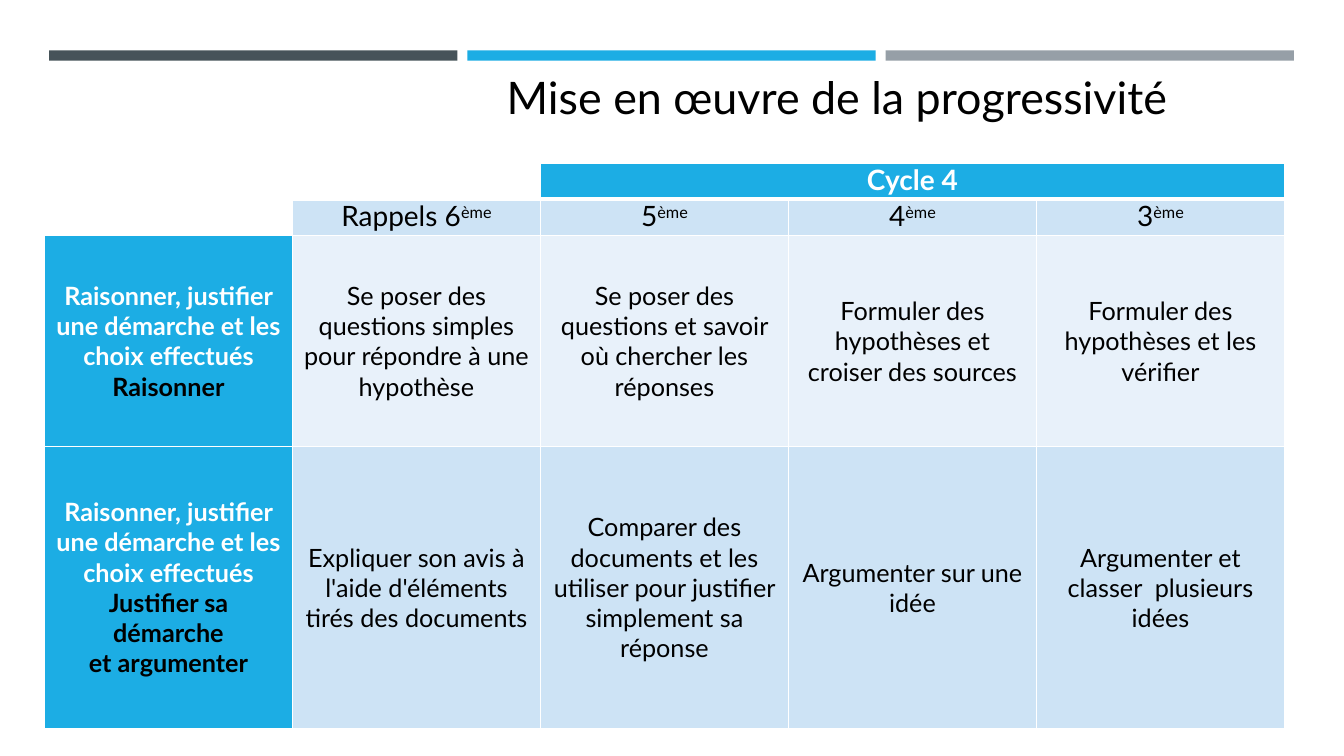
import pptx
import pptx.dml.color
import pptx.enum.shapes
import pptx.enum.text
import pptx.oxml
import pptx.oxml.ns
import pptx.util

Cm = pptx.util.Cm
Pt = pptx.util.Pt
RGBColor = pptx.dml.color.RGBColor

BLACK = RGBColor(0x00, 0x00, 0x00)
WHITE = RGBColor(0xFF, 0xFF, 0xFF)
SLATE = RGBColor(0x46, 0x53, 0x59)
BLUE = RGBColor(0x1C, 0xAD, 0xE4)
GREY = RGBColor(0x96, 0x9F, 0xA7)
PALE_BLUE = RGBColor(0xCD, 0xE3, 0xF5)
PALEST_BLUE = RGBColor(0xE8, 0xF1, 0xFA)

SKILL = "Raisonner, justifier une démarche et les choix effectués"
LEVELS = ["Rappels 6", "5", "4", "3"]
SKILL_ROWS = [
    (["Raisonner"], PALEST_BLUE, [
        "Se poser des questions simples pour répondre à une hypothèse",
        "Se poser des questions et savoir où chercher les réponses",
        "Formuler des hypothèses et croiser des sources",
        "Formuler des hypothèses et les vérifier",
    ]),
    (["Justifier sa démarche", "et argumenter"], PALE_BLUE, [
        "Expliquer son avis à l'aide d'éléments tirés des documents",
        "Comparer des documents et les utiliser pour justifier simplement sa réponse",
        "Argumenter sur une idée",
        "Argumenter et classer  plusieurs idées",
    ]),
]
COLUMN_WIDTH = 6.25
ROW_HEIGHTS = [0.91, 0.91, 5.33, 7.09]
BAR_WIDTH, BAR_PITCH = 10.29, 10.54


class SlideBuilder:
    font_name = "Lato"

    def __init__(self, slide):
        self.slide = slide

    def bar(self, left, top, width, height, color):
        bar = self.slide.shapes.add_shape(
            pptx.enum.shapes.MSO_SHAPE.RECTANGLE,
            Cm(left), Cm(top), Cm(width), Cm(height))
        bar.shadow.inherit = False
        bar.fill.solid()
        bar.fill.fore_color.rgb = color
        bar.line.fill.background()

    def run(self, paragraph, text, size, color=BLACK, bold=False, raised=False):
        run = paragraph.add_run()
        run.text = text
        run.font.name = self.font_name
        run.font.size = Pt(size)
        run.font.bold = bold
        run.font.color.rgb = color
        if raised:
            run.font._element.set("baseline", "30000")

    def title(self, text, left, top, width, height):
        frame = self.slide.shapes.add_textbox(
            Cm(left), Cm(top), Cm(width), Cm(height)).text_frame
        frame.word_wrap = True
        frame.auto_size = pptx.enum.text.MSO_AUTO_SIZE.SHAPE_TO_FIT_TEXT
        self.run(frame.paragraphs[0], text, 32)

    def table(self, left, top, column_count, column_width, row_heights):
        table = self.slide.shapes.add_table(
            len(row_heights), column_count, Cm(left), Cm(top),
            Cm(column_width * column_count), Cm(sum(row_heights))).table
        table.first_row = table.horz_banding = False
        for column in table.columns:
            column.width = Cm(column_width)
        for row, height in zip(table.rows, row_heights):
            row.height = Cm(height)
        return table

    def borders(self, cell, **widths):
        """Draw white borders, 1 pt unless a side (L, R, T, B) is given."""
        properties = cell._tc.get_or_add_tcPr()
        for side in "LRTB":
            properties.append(pptx.oxml.parse_xml(
                f'<a:ln{side} {pptx.oxml.ns.nsdecls("a")} w="{Pt(widths.get(side, 1))}">'
                f'<a:solidFill><a:srgbClr val="{WHITE}"/></a:solidFill></a:ln{side}>'))

    def cell(self, cell, fill, paragraphs=(), middle=False):
        """Fill a cell; each paragraph is a list of run argument dicts."""
        cell.margin_left = cell.margin_right = Cm(0.18)
        cell.margin_top = cell.margin_bottom = 0
        if middle:
            cell.vertical_anchor = pptx.enum.text.MSO_ANCHOR.MIDDLE
        cell.fill.solid()
        cell.fill.fore_color.rgb = fill
        frame = cell.text_frame
        for index, runs in enumerate(paragraphs):
            paragraph = frame.add_paragraph() if index else frame.paragraphs[0]
            paragraph.alignment = pptx.enum.text.PP_ALIGN.CENTER
            for run in runs:
                self.run(paragraph, **run)


def fill_progression(builder, table):
    for row in range(len(ROW_HEIGHTS)):
        for column in range(len(LEVELS) + 1):
            heavy = {0: {"B": 3}, 1: {"T": 3}}.get(row, {})
            builder.borders(table.cell(row, column), **heavy)

    for row, column in [(0, 0), (0, 1), (1, 0)]:
        builder.cell(table.cell(row, column), WHITE)
    cycle = table.cell(0, 2)
    cycle.merge(table.cell(0, 4))
    builder.cell(cycle, BLUE, [[dict(text="Cycle 4", size=20, color=WHITE, bold=True)]])

    for column, level in enumerate(LEVELS, 1):
        builder.cell(table.cell(1, column), PALE_BLUE, [[
            dict(text=level, size=20), dict(text="ème", size=20, raised=True)]])

    for row, (focus, tint, steps) in enumerate(SKILL_ROWS, 2):
        heading = [[dict(text=SKILL, size=18, color=WHITE, bold=True)]]
        heading += [[dict(text=line, size=18, bold=True)] for line in focus]
        builder.cell(table.cell(row, 0), BLUE, heading, middle=True)
        for column, step in enumerate(steps, 1):
            builder.cell(table.cell(row, column), tint,
                         [[dict(text=step, size=18)]], middle=True)


def main():
    presentation = pptx.Presentation()
    presentation.slide_width = Cm(33.87)
    presentation.slide_height = Cm(19.05)
    builder = SlideBuilder(presentation.slides.add_slide(presentation.slide_layouts[6]))

    for index, color in enumerate([SLATE, BLUE, GREY]):
        builder.bar(1.24 + index * BAR_PITCH, 1.27, BAR_WIDTH, 0.26, color)
    builder.title("Mise en œuvre de la progressivité", 12.52, 1.63, 19.86, 1.63)
    table = builder.table(1.12, 4.11, len(LEVELS) + 1, COLUMN_WIDTH, ROW_HEIGHTS)
    fill_progression(builder, table)
    presentation.save("out.pptx")


if __name__ == "__main__":
    main()
